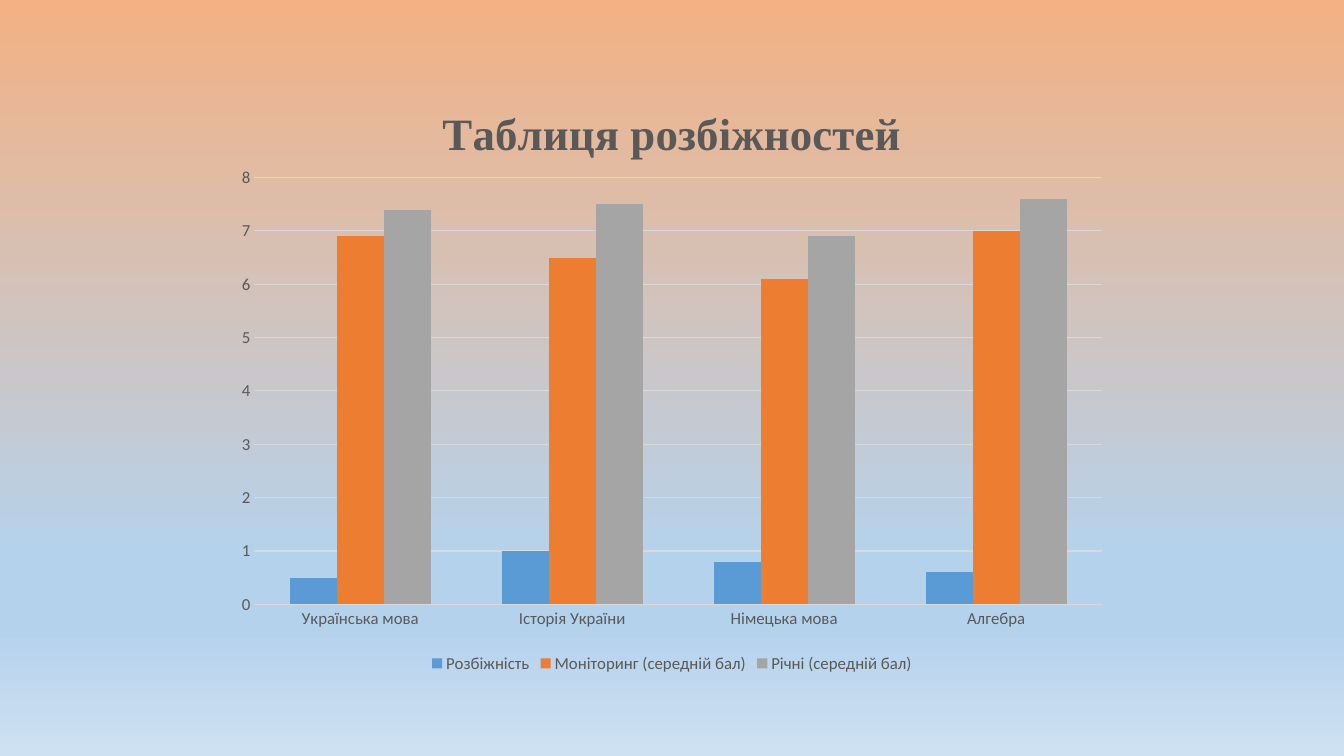
from typing import Any, NamedTuple

from lxml import etree
from pptx import Presentation
from pptx.chart.data import CategoryChartData
from pptx.dml.color import RGBColor
from pptx.enum.chart import XL_CHART_TYPE, XL_LEGEND_POSITION, XL_TICK_MARK
from pptx.oxml.ns import qn
from pptx.util import Inches, Pt

COLUMNS = XL_CHART_TYPE.COLUMN_CLUSTERED
BOTTOM = XL_LEGEND_POSITION.BOTTOM
NO_TICK = XL_TICK_MARK.NONE

ORANGE = RGBColor(0xED, 0x7D, 0x31)
BLUE = RGBColor(0x5B, 0x9B, 0xD5)
GRAY = RGBColor(0xA5, 0xA5, 0xA5)
TEXT = RGBColor(0x59, 0x59, 0x59)
GRID = RGBColor(0xD9, 0xD9, 0xD9)
PEACH = RGBColor(0xF4, 0xB1, 0x83)
SKY = RGBColor(0xB5, 0xD2, 0xEC)
PALE_SKY = RGBColor(0xCE, 0xE1, 0xF2)

LABEL_FORMAT = {"name": "Calibri", "size": Pt(12), "bold": False}
TITLE_FORMAT = {"name": "Times New Roman", "size": Pt(32), "bold": True}


class Series(NamedTuple):
    name: str
    values: tuple[float, ...]
    color: RGBColor


class Stop(NamedTuple):
    percent: int
    color: RGBColor


SUBJECTS = ("Українська мова", "Історія України", "Німецька мова", "Алгебра")
SERIES = (
    Series("Розбіжність", (0.5, 1, 0.8, 0.6), BLUE),
    Series("Моніторинг (середній бал)", (6.9, 6.5, 6.1, 7), ORANGE),
    Series("Річні (середній бал)", (7.4, 7.5, 6.9, 7.6), GRAY),
)
BACKGROUND = (Stop(0, PEACH), Stop(74, SKY), Stop(83, SKY), Stop(100, PALE_SKY))
PLOT_LAYOUT = {"x": 0.034, "y": 0.164, "w": 0.946, "h": 0.714}


def format_font(font: Any, values: dict[str, Any]) -> None:
    for name, value in values.items():
        setattr(font, name, value)
    font.color.rgb = TEXT


def paint_background(s: Any, stops: tuple[Stop, ...]) -> None:
    """Fill the slide with a top-to-bottom gradient."""
    s.background.fill.gradient()
    grad = s.element.find(".//" + qn("a:gradFill"))
    for child in list(grad):
        grad.remove(child)
    stop_list = etree.SubElement(grad, qn("a:gsLst"))
    for stop in stops:
        gs = etree.SubElement(stop_list, qn("a:gs"), pos=str(stop.percent * 1000))
        etree.SubElement(gs, qn("a:srgbClr"), val=str(stop.color))
    etree.SubElement(grad, qn("a:lin"), ang="5400000", scaled="0")


def place_plot(chart: Any, layout: dict[str, float]) -> None:
    """Fix the inner plot area as fractions of the chart."""
    area = chart.element.find(".//" + qn("c:plotArea"))
    for old in area.findall(qn("c:layout")):
        area.remove(old)
    holder = etree.Element(qn("c:layout"))
    area.insert(0, holder)
    manual = etree.SubElement(holder, qn("c:manualLayout"))
    settings = {"layoutTarget": "inner", "xMode": "edge", "yMode": "edge", **layout}
    for tag, value in settings.items():
        etree.SubElement(manual, qn(f"c:{tag}"), val=str(value))


def add_marks_chart(s: Any) -> None:
    data = CategoryChartData()
    data.categories = SUBJECTS
    for series in SERIES:
        data.add_series(series.name, series.values)
    chart = s.shapes.add_chart(
        COLUMNS, Inches(2.22), Inches(0.79), Inches(8.89), Inches(5.93), data
    ).chart
    format_font(chart.font, LABEL_FORMAT)

    chart.has_title = True
    p = chart.chart_title.text_frame.paragraphs[0]
    r = p.add_run()
    r.text = "Таблиця розбіжностей"
    format_font(r.font, TITLE_FORMAT)
    chart.chart_title.include_in_layout = False

    chart.has_legend = True
    chart.legend.position = BOTTOM
    chart.legend.include_in_layout = False
    format_font(chart.legend.font, LABEL_FORMAT)

    for axis in (chart.category_axis, chart.value_axis):
        axis.major_tick_mark = axis.minor_tick_mark = NO_TICK
        axis.format.line.fill.background()
        format_font(axis.tick_labels.font, LABEL_FORMAT)
    value_axis = chart.value_axis
    value_axis.minimum_scale, value_axis.maximum_scale = 0, 8
    value_axis.major_unit = 1
    grid = value_axis.major_gridlines.format.line
    grid.color.rgb = GRID
    grid.width = Pt(0.75)

    plot = chart.plots[0]
    plot.gap_width, plot.overlap = 150, 0
    plot.vary_by_categories = False
    for bars, series in zip(plot.series, SERIES):
        bars.format.fill.solid()
        bars.format.fill.fore_color.rgb = series.color
    place_plot(chart, PLOT_LAYOUT)


def main() -> None:
    prs = Presentation()
    prs.slide_width, prs.slide_height = Inches(13.33), Inches(7.5)
    s = prs.slides.add_slide(prs.slide_layouts[6])
    paint_background(s, BACKGROUND)
    add_marks_chart(s)
    prs.save("out.pptx")


if __name__ == "__main__":
    main()
